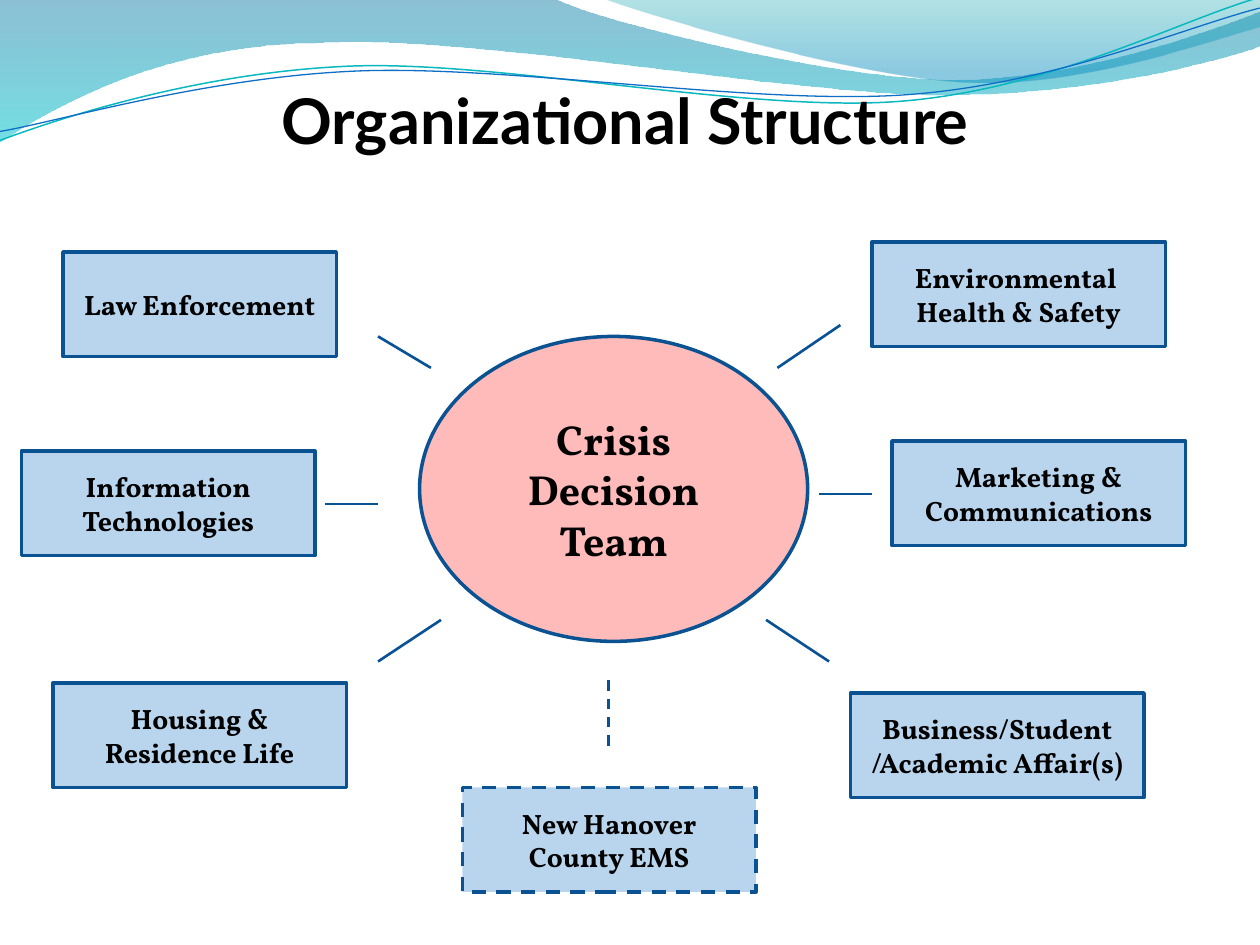
import math
from dataclasses import dataclass

import lxml.etree
import pptx
import pptx.dml.color
import pptx.enum.dml
import pptx.enum.shapes
import pptx.enum.text
import pptx.oxml
import pptx.oxml.ns
import pptx.util
from pptx.oxml.ns import qn
from pptx.util import Inches

Point = tuple[float, float]
Segment = list[Point]  # one point is a straight line, three points are a Bezier curve
OUTLINE = "0B5292"
SPOKE_COLOR = "095295"
RIPPLE_TILT = -2.7


@dataclass(frozen=True)
class Stop:
    position: float
    color: str
    opacity: int


@dataclass(frozen=True)
class Unit:
    """A box of the chart; every label line is one paragraph."""
    label: str
    left: float
    top: float
    width: float = 2.33
    height: float = 0.83
    dashed: bool = False


@dataclass(frozen=True)
class Spoke:
    start: Point
    end: Point
    dashed: bool = False


UNITS = [
    Unit("Law Enforcement", 0.5, 2, width=2.17),
    Unit("Environmental \vHealth & Safety", 6.92, 1.92),
    Unit("Marketing & Communications", 7.08, 3.5),
    Unit("Information Technologies", 0.17, 3.58),
    Unit("Business/Student\n/Academic Affair(s)", 6.75, 5.5),
    Unit("Housing & Residence Life", 0.42, 5.42),
    Unit("New Hanover County EMS", 3.67, 6.25, dashed=True),
]
CENTER = Unit("Crisis Decision Team", 3.33, 2.67, 3.08, 2.42)

SPOKES = [
    Spoke((2.58, 4), (3, 4)),
    Spoke((6.5, 3.92), (6.92, 3.92)),
    Spoke((6.08, 4.92), (6.58, 5.25)),
    Spoke((3, 5.25), (3.5, 4.92)),
    Spoke((6.17, 2.92), (6.67, 2.58)),
    Spoke((3.42, 2.92), (3, 2.67)),
    Spoke((4.83, 5.92), (4.83, 5.34), dashed=True),
]


def rgb(color: str) -> pptx.dml.color.RGBColor:
    return pptx.dml.color.RGBColor.from_string(color)


def set_opacity(color_element, percent: int) -> None:
    alpha = lxml.etree.SubElement(color_element, qn("a:alpha"))
    alpha.set("val", str(percent * 1000))


def style_line(line, color: str, width: float, dashed: bool = False) -> None:
    line.color.rgb = rgb(color)
    line.width = pptx.util.Pt(width)
    if dashed:
        line.dash_style = pptx.enum.dml.MSO_LINE.DASH


def add_outline(slide, start: Point, segments: list[Segment], closed: bool):
    """Build a polygon through all points, then bend each three-point segment."""
    builder = slide.shapes.build_freeform(Inches(start[0]), Inches(start[1]))
    builder.add_line_segments(
        [(Inches(x), Inches(y)) for segment in segments for x, y in segment], close=closed)
    outline = builder.convert_to_shape()
    outline.shadow.inherit = False
    lines = iter(outline._element.spPr.findall(".//" + qn("a:lnTo")))
    for segment in segments:
        pieces = [next(lines) for _ in segment]
        if len(pieces) == 3:
            curve = lxml.etree.Element(qn("a:cubicBezTo"))
            pieces[0].addprevious(curve)
            for piece in pieces:
                curve.append(piece[0])
                piece.getparent().remove(piece)
    return outline


def add_wave(slide, start: Point, segments: list[Segment], stops: list[Stop]) -> None:
    """Draw a borderless shape with a see-through gradient from top to bottom."""
    wave = add_outline(slide, start, segments, closed=True)
    wave.line.fill.background()
    wave.fill.gradient()
    wave.fill.gradient_angle = 270
    for gradient_stop, stop in zip(wave.fill.gradient_stops, stops):
        gradient_stop.position = stop.position
        gradient_stop.color.rgb = rgb(stop.color)
    colors = wave._element.spPr.findall(".//" + qn("a:srgbClr"))
    for color_element, stop in zip(colors, stops):
        set_opacity(color_element, stop.opacity)


def add_ripple(slide, start: Point, segments: list[Segment], middle: Point,
               color: str, width: float) -> None:
    """Draw a curve level around its middle, then tilt it to its final place."""
    angle = math.radians(-RIPPLE_TILT)

    def level(point: Point) -> Point:
        dx, dy = point[0] - middle[0], point[1] - middle[1]
        return (middle[0] + dx * math.cos(angle) - dy * math.sin(angle),
                middle[1] + dx * math.sin(angle) + dy * math.cos(angle))

    ripple = add_outline(slide, level(start),
                         [[level(point) for point in segment] for segment in segments],
                         closed=False)
    ripple.left = Inches(middle[0]) - ripple.width // 2
    ripple.top = Inches(middle[1]) - ripple.height // 2
    ripple.rotation = RIPPLE_TILT
    ripple.fill.background()
    style_line(ripple.line, color, width)


def write(text_frame, text: str, font: str, size: float) -> None:
    text_frame.word_wrap = True
    text_frame.text = text
    for paragraph in text_frame.paragraphs:
        paragraph.alignment = pptx.enum.text.PP_ALIGN.CENTER
        for run in paragraph.runs:
            run.font.name = font
            run.font.size = pptx.util.Pt(size)
            run.font.bold = True
            run.font.color.rgb = rgb("000000")


def add_unit(slide, unit: Unit, preset, color: str, opacity: int, size: float) -> None:
    box = slide.shapes.add_shape(preset, Inches(unit.left), Inches(unit.top),
                                 Inches(unit.width), Inches(unit.height))
    box.shadow.inherit = False
    box.fill.solid()
    box.fill.fore_color.rgb = rgb(color)
    set_opacity(box._element.spPr.find(".//" + qn("a:srgbClr")), opacity)
    style_line(box.line, OUTLINE, 2, unit.dashed)
    box.text_frame.vertical_anchor = pptx.enum.text.MSO_ANCHOR.MIDDLE
    write(box.text_frame, unit.label, "Vollkorn", size)


def add_spoke(slide, spoke: Spoke) -> None:
    connector = slide.shapes.add_connector(
        pptx.enum.shapes.MSO_CONNECTOR.STRAIGHT,
        *(Inches(value) for value in spoke.start + spoke.end))
    style_line(connector.line, SPOKE_COLOR, 1.5, spoke.dashed)
    lxml.etree.SubElement(connector._element.spPr, qn("a:effectLst"))


def add_header(slide) -> None:
    add_wave(slide, (0, -0.01), [
        [(4.4, -0.01)], [(4.76, 0.17), (6.64, 0.63), (7.58, 0.63)],
        [(8.53, 0.63), (9.58, 0.26), (10, 0.09)], [(10.01, 0.36)],
        [(9.83, 0.44), (8.7, 0.76), (7.46, 0.75)], [(6.22, 0.75), (3.82, 0.28), (2.57, 0.34)],
        [(1.29, 0.35), (0.46, 0.83), (-0.01, 1.13)],
    ], [Stop(0, "0074A1", 45), Stop(1, "00C6CF", 55)])
    add_wave(slide, (4.79, -0.01), [
        [(5.09, 0.11), (6.82, 0.62), (7.69, 0.65)],
        [(8.56, 0.69), (9.61, 0.32), (10, 0.21)], [(10, 0)],
    ], [Stop(0, "00A1A9", 30), Stop(0.8, "008BBF", 45)])
    add_ripple(slide, (0, 1.11), [
        [(0.48, 0.93), (1.58, 0.57), (2.77, 0.52)], [(3.95, 0.47), (5.93, 0.89), (7.13, 0.8)],
        [(8.33, 0.71), (9.38, 0.15), (9.98, -0.02)]], (4.99, 0.58), "0AB8BF", 0.85)
    add_ripple(slide, (0, 1.04), [
        [(0.47, 0.96), (1.64, 0.61), (2.83, 0.56)], [(4.03, 0.51), (5.97, 0.83), (7.17, 0.75)],
        [(8.36, 0.67), (9.41, 0.21), (10, 0.06)]], (5, 0.59), "0F6FC6", 0.75)


def main() -> None:
    deck = pptx.Presentation()
    deck.slide_width, deck.slide_height = Inches(10), Inches(7.5)
    slide = deck.slides.add_slide(deck.slide_layouts[6])
    add_header(slide)
    title = slide.shapes.add_textbox(Inches(0.42), 0, Inches(9.08), Inches(1.25)).text_frame
    title.margin_left = title.margin_right = title.margin_bottom = 0
    title.vertical_anchor = pptx.enum.text.MSO_ANCHOR.BOTTOM
    write(title, "Organizational Structure", "Lato", 36)
    presets = pptx.enum.shapes.MSO_SHAPE
    add_unit(slide, CENTER, presets.OVAL, "FF0000", 27, 24)
    for unit in UNITS:
        add_unit(slide, unit, presets.RECTANGLE, "0F6FC6", 29, 16)
    for spoke in SPOKES:
        add_spoke(slide, spoke)
    deck.save("out.pptx")


if __name__ == "__main__":
    main()
